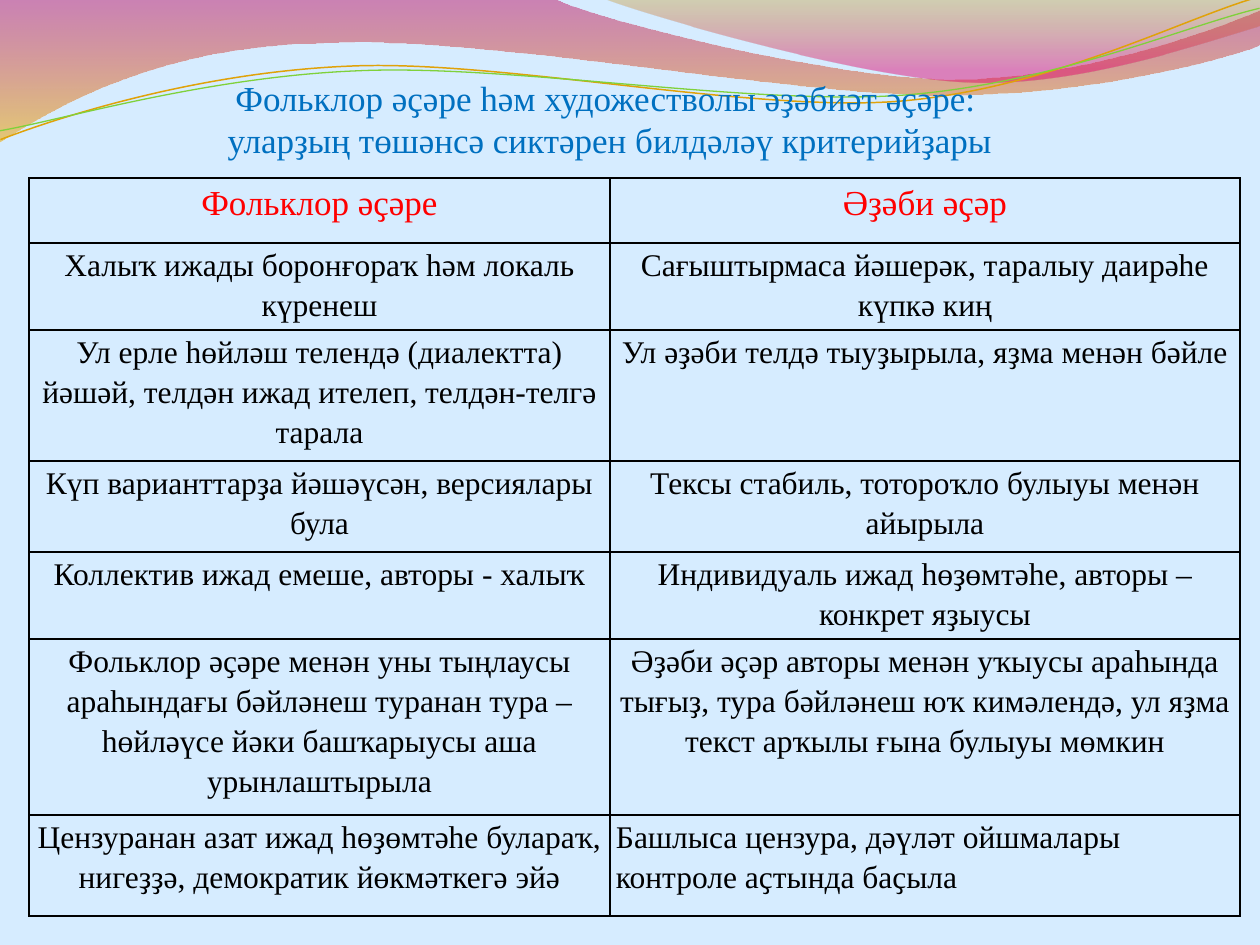
from dataclasses import dataclass

from lxml import etree
from pptx import Presentation
from pptx.dml.color import RGBColor
from pptx.enum.text import MSO_ANCHOR, MSO_AUTO_SIZE, PP_ALIGN
from pptx.oxml.ns import qn
from pptx.util import Pt

CENTER = PP_ALIGN.CENTER
LEFT = PP_ALIGN.LEFT
MIDDLE = MSO_ANCHOR.MIDDLE
NO_AUTOFIT = MSO_AUTO_SIZE.NONE
EMU_PER_PX = 914400 / 126


@dataclass(frozen=True)
class Theme:
    font: str = "Times New Roman"
    background: str = "D6ECFF"
    title: str = "0070C0"
    header: str = "FF0000"
    text: str = "000000"
    orange: str = "E0A209"
    green: str = "7FD13B"
    back_wave: tuple = ((0, "BD0059", 45), (100, "F0AB00", 55))
    front_wave: tuple = ((0, "C38B00", 30), (80, "E1006B", 45))
    large: int = 20
    normal: int = 18
    line_spacing: float = 1.15


BACK_WAVE = [
    (0, 0), (554, -1),
    (600, 21, 837, 79, 955, 79), (1075, 79, 1207, 33, 1260, 11),
    (1261, 45),
    (1239, 55, 1096, 96, 940, 95), (784, 95, 481, 35, 324, 43),
    (163, 45, 58, 105, -1, 142),
]
FRONT_WAVE = [
    (604, -1),
    (641, 14, 859, 78, 969, 82), (1079, 87, 1211, 40, 1260, 26),
    (1260, 0),
]
ORANGE_CURVE = [
    (-2, 110),
    (58, 90, 199, 52, 350, 53), (499, 53, 745, 118, 896, 114),
    (1049, 109, 1184, 45, 1260, 27),
]
GREEN_CURVE = [
    (-2, 101),
    (57, 94, 205, 57, 357, 58), (509, 58, 750, 112, 902, 108),
    (1052, 104, 1187, 52, 1262, 38),
]
CURVE_ROTATION = 357.3
TITLE = [
    "Фольклор әҫәре һәм художестволы әҙәбиәт әҫәре: ",
    "уларҙың төшәнсә сиктәрен билдәләү критерийҙары",
]
COLUMN_WIDTHS = [581, 630]
ROW_HEIGHTS = [65, 87, 131, 91, 87, 176, 101]
COMPARISON = [
    ("Фольклор әҫәре", "Әҙәби әҫәр"),
    ("Халыҡ ижады боронғораҡ һәм локаль күренеш",
     "Сағыштырмаса йәшерәк, таралыу даирәһе күпкә киң"),
    ("Ул ерле һөйләш телендә (диалектта) йәшәй, телдән ижад ителеп, телдән-телгә тарала",
     "Ул әҙәби телдә тыуҙырыла, яҙма менән бәйле"),
    ("Күп варианттарҙа йәшәүсән, версиялары була",
     "Тексы стабиль, тотороҡло булыуы менән айырыла"),
    ("Коллектив ижад емеше, авторы - халыҡ",
     "Индивидуаль ижад һөҙөмтәһе, авторы – конкрет яҙыусы"),
    ("Фольклор әҫәре менән уны тыңлаусы араһындағы бәйләнеш туранан тура – "
     "һөйләүсе йәки башҡарыусы аша урынлаштырыла",
     "Әҙәби әҫәр авторы менән уҡыусы араһында тығыҙ, тура бәйләнеш юҡ кимәлендә, "
     "ул яҙма текст арҡылы ғына булыуы мөмкин"),
    ("Цензуранан азат ижад һөҙөмтәһе булараҡ, нигеҙҙә, демократик йөкмәткегә эйә",
     "Башлыса цензура, дәүләт ойшмалары контроле аҫтында баҫыла"),
]


def px(length):
    return round(length * EMU_PER_PX)


def bend_lines(shape, segments):
    lines = list(shape.element.iter(qn("a:lnTo")))
    for segment in segments[1:]:
        count = len(segment) // 2
        group, lines = lines[:count], lines[count:]
        if count == 3:
            bezier = etree.Element(qn("a:cubicBezTo"))
            group[0].addprevious(bezier)
            for line in group:
                bezier.append(line[0])
                line.getparent().remove(line)


class SlideBuilder:
    def __init__(self, slide, theme):
        self.slide = slide
        self.theme = theme
        background = slide.background.fill
        background.solid()
        background.fore_color.rgb = RGBColor.from_string(theme.background)

    def style(self, paragraph, size, color, alignment=CENTER):
        paragraph.alignment = alignment
        for run in paragraph.runs:
            run.font.name = self.theme.font
            run.font.size = Pt(size)
            run.font.color.rgb = RGBColor.from_string(color)

    def outline(self, segments, close):
        points = [(px(x), px(y)) for segment in segments
                  for x, y in zip(segment[::2], segment[1::2])]
        builder = self.slide.shapes.build_freeform(*points[0])
        builder.add_line_segments(points[1:], close=close)
        shape = builder.convert_to_shape()
        bend_lines(shape, segments)
        shape.shadow.inherit = False
        return shape

    def wave(self, segments, stops):
        shape = self.outline(segments, True)
        shape.line.fill.background()
        shape.fill.gradient()
        gradient = shape.element.spPr.find(qn("a:gradFill"))
        for child in list(gradient):
            gradient.remove(child)
        stop_list = etree.SubElement(gradient, qn("a:gsLst"))
        for position, color, opacity in stops:
            stop = etree.SubElement(stop_list, qn("a:gs"), pos=str(position * 1000))
            stop_color = etree.SubElement(stop, qn("a:srgbClr"), val=color)
            etree.SubElement(stop_color, qn("a:alpha"), val=str(opacity * 1000))
        etree.SubElement(gradient, qn("a:lin"), ang="5400000", scaled="0")

    def curve(self, segments, color, width):
        shape = self.outline(segments, False)
        shape.rotation = CURVE_ROTATION
        shape.fill.background()
        shape.line.color.rgb = RGBColor.from_string(color)
        shape.line.width = Pt(width)

    def border(self, cell):
        properties = cell._tc.get_or_add_tcPr()
        for side in ("lnL", "lnR", "lnT", "lnB"):
            line = etree.SubElement(properties, qn(f"a:{side}"), w=str(Pt(1)))
            fill = etree.SubElement(line, qn("a:solidFill"))
            etree.SubElement(fill, qn("a:srgbClr"), val=self.theme.text)

    def table(self, left, top, column_widths, row_heights, rows):
        table = self.slide.shapes.add_table(
            len(rows), len(column_widths), px(left), px(top),
            px(sum(column_widths)), px(sum(row_heights))).table
        table.first_row = table.horz_banding = False
        for column, width in zip(table.columns, column_widths):
            column.width = px(width)
        for row, height, texts in zip(table.rows, row_heights, rows):
            row.height = px(height)
            for cell, text in zip(row.cells, texts):
                self.border(cell)
                cell.fill.background()
                cell.margin_left = cell.margin_right = px(6)
                cell.margin_top = cell.margin_bottom = 0
                cell.text_frame.text = text
                paragraph = cell.text_frame.paragraphs[0]
                paragraph.line_spacing = self.theme.line_spacing
                if texts is rows[0]:
                    self.style(paragraph, self.theme.large, self.theme.header)
                else:
                    self.style(paragraph, self.theme.normal, self.theme.text)
        paragraph.alignment = LEFT

    def title(self, left, top, width, height, lines):
        shape = self.slide.shapes.title
        shape.left, shape.top = px(left), px(top)
        shape.width, shape.height = px(width), px(height)
        frame = shape.text_frame
        frame.text = "\n".join(lines)
        frame.word_wrap = True
        frame.auto_size = NO_AUTOFIT
        frame.vertical_anchor = MIDDLE
        frame.margin_top, frame.margin_bottom = px(6), px(44)
        for paragraph in frame.paragraphs:
            self.style(paragraph, self.theme.large, self.theme.title)
        self.slide.shapes.element.append(shape.element)


def main():
    theme = Theme()
    presentation = Presentation()
    presentation.slide_width, presentation.slide_height = px(1260), px(945)
    slide = presentation.slides.add_slide(presentation.slide_layouts[5])
    builder = SlideBuilder(slide, theme)
    builder.wave(BACK_WAVE, theme.back_wave)
    builder.wave(FRONT_WAVE, theme.front_wave)
    builder.curve(ORANGE_CURVE, theme.orange, 0.85)
    builder.curve(GREEN_CURVE, theme.green, 0.75)
    builder.table(29, 178, COLUMN_WIDTHS, ROW_HEIGHTS, COMPARISON)
    builder.title(29, 69, 1162, 137, TITLE)
    presentation.save("out.pptx")


if __name__ == "__main__":
    main()
